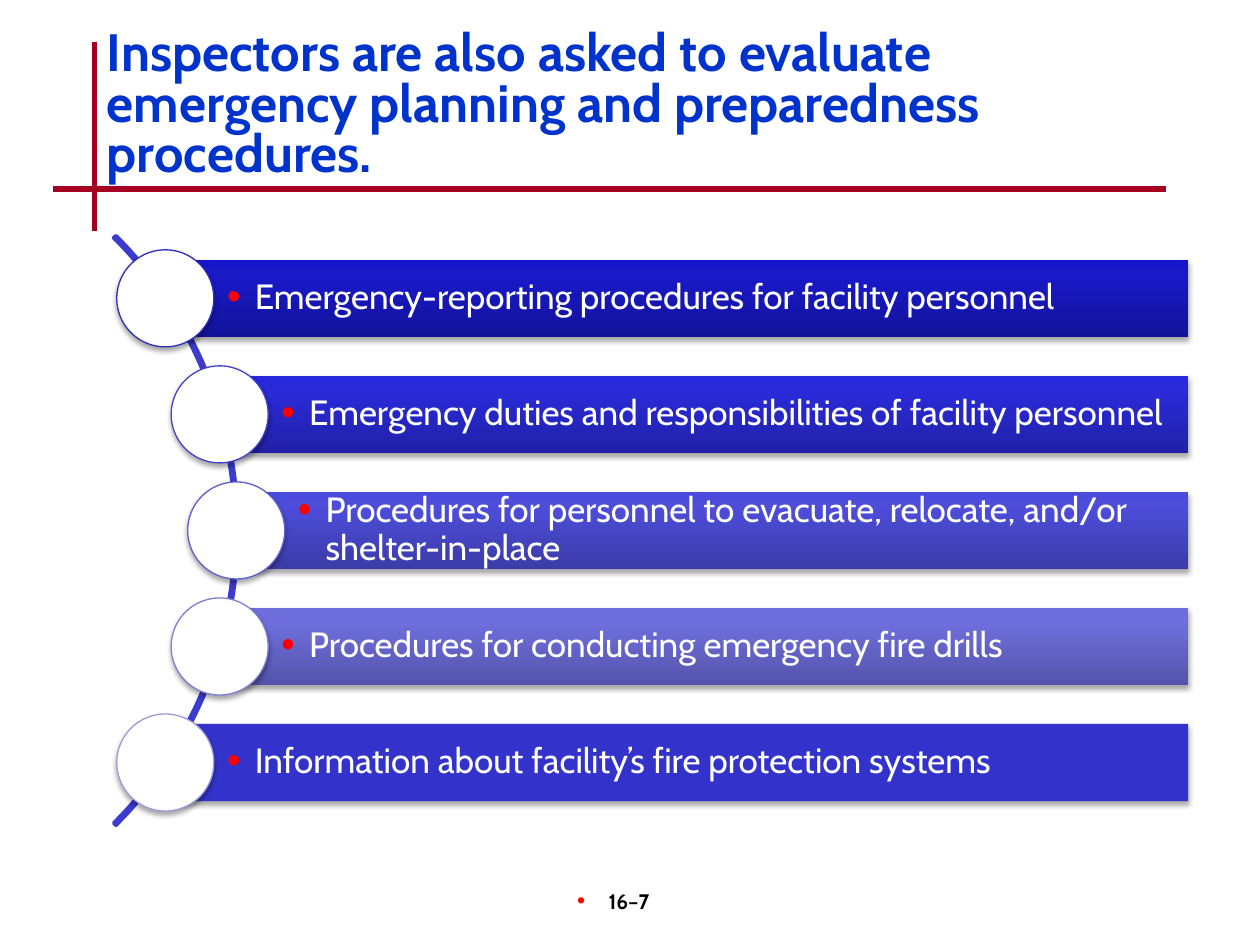
"""Builds the slide on emergency planning and preparedness procedures."""
from math import sqrt

from lxml.etree import SubElement
from pptx import Presentation
from pptx.dml.color import RGBColor
from pptx.enum.shapes import MSO_CONNECTOR, MSO_SHAPE
from pptx.enum.text import MSO_ANCHOR, PP_ALIGN
from pptx.oxml.ns import qn
from pptx.util import Inches, Pt

COLORS = {
    "title": "0033CC", "rule": "A50021", "arc": "3B3BCD", "bullet": "FF0000",
    "white": "FFFFFF", "black": "000000", "flat": "3333CC",
}
COLUMNS, ROWS = 100, 75
ARC_X, ARC_Y, ARC_RADIUS, CENTRE_RADIUS = -14.2, 42.1, 33.1, 32.95
STEP, BAR_HEIGHT, BAR_RIGHT, CIRCLE = 9.21, 6.15, 94.3, 7.7
PROCEDURES = [
    ("Emergency-reporting procedures for facility personnel",
     ("13139A", "1919C8", "1515CC"), "2E2EB9"),
    ("Emergency duties and responsibilities of facility personnel",
     ("2121A7", "2A2AD9", "2727DD"), "4141CB"),
    ("Procedures for personnel to evacuate, relocate, and/or shelter-in-place",
     ("3B3BA8", "4D4DDA", "4A4ADE"), "6060D0"),
    ("Procedures for conducting emergency fire drills",
     ("5454AA", "6E6EDC", "6C6CDF"), "7E7ED6"),
    ("Information about facility’s fire protection systems",
     (COLORS["flat"],), "9C9CDD"),
]


def write(frame, text, size, color, bold=False, align=PP_ALIGN.LEFT, spacing=1.0,
          anchor=MSO_ANCHOR.TOP, insets=(0.1, 0.05, 0.1, 0.05), bullet=None):
    frame.word_wrap = True
    frame.vertical_anchor = anchor
    (frame.margin_left, frame.margin_top,
     frame.margin_right, frame.margin_bottom) = map(Inches, insets)
    paragraph = frame.paragraphs[0]
    paragraph.alignment = align
    paragraph.line_spacing = spacing
    if bullet:
        margin, hanging = bullet
        properties = paragraph._p.get_or_add_pPr()
        properties.set("marL", str(Inches(margin)))
        properties.set("indent", str(-Inches(hanging)))
        tint = SubElement(properties, qn("a:buClr"))
        SubElement(tint, qn("a:srgbClr"), val=COLORS["bullet"])
        SubElement(properties, qn("a:buSzPct"), val="110000")
        SubElement(properties, qn("a:buFont"), typeface="Arial")
        SubElement(properties, qn("a:buChar"), char="•")
    run = paragraph.add_run()
    run.text = text
    run.font.name = "Cabin"
    run.font.size = Pt(size)
    run.font.bold = bold
    run.font.color.rgb = RGBColor.from_string(color)


class SlideBuilder:
    def __init__(self, deck):
        self.slide = deck.slides.add_slide(deck.slide_layouts[6])
        self.column = deck.slide_width / COLUMNS
        self.row = deck.slide_height / ROWS

    def place(self, x, y, width, height):
        return (round(x * self.column), round(y * self.row),
                round(width * self.column), round(height * self.row))

    def rule(self, x1, y1, x2, y2):
        line = self.slide.shapes.add_connector(
            MSO_CONNECTOR.STRAIGHT, *self.place(x1, y1, x2, y2))
        line.line.color.rgb = RGBColor.from_string(COLORS["rule"])
        line.line.width = Pt(3)
        SubElement(line._element.spPr, qn("a:effectLst"))

    def label(self, text, x, y, width, height, **style):
        box = self.slide.shapes.add_textbox(*self.place(x, y, width, height))
        write(box.text_frame, text, **style)

    def shape(self, kind, x, y, width, height, fills=(), outline=None, weight=0.75,
              shadow=True):
        shape = self.slide.shapes.add_shape(kind, *self.place(x, y, width, height))
        if len(fills) > 1:
            self.shade(shape, fills)
        elif fills:
            shape.fill.solid()
            shape.fill.fore_color.rgb = RGBColor.from_string(fills[0])
        else:
            shape.fill.background()
        if outline:
            shape.line.color.rgb = RGBColor.from_string(outline)
            shape.line.width = Pt(weight)
        else:
            shape.line.fill.background()
        shape.shadow.inherit = False
        if shadow:
            effects = shape._element.spPr.find(qn("a:effectLst"))
            outer = SubElement(effects, qn("a:outerShdw"), blurRad=str(Pt(3.1)),
                               dist=str(Pt(1.8)), dir="5400000", rotWithShape="0")
            tint = SubElement(outer, qn("a:srgbClr"), val=COLORS["black"])
            SubElement(tint, qn("a:alpha"), val="35000")
        return shape

    def shade(self, shape, fills):
        shape.fill.gradient()
        shape.fill.gradient_angle = 90
        stops = shape._element.spPr.find(qn("a:gradFill")).find(qn("a:gsLst"))
        for stop in list(stops):
            stops.remove(stop)
        for position, color in zip((0, 80000, 100000), fills):
            stop = SubElement(stops, qn("a:gs"), pos=str(position))
            SubElement(stop, qn("a:srgbClr"), val=color)

    def arc(self):
        arc = self.shape(MSO_SHAPE.BLOCK_ARC, ARC_X - ARC_RADIUS, ARC_Y - ARC_RADIUS,
                         2 * ARC_RADIUS, 2 * ARC_RADIUS, outline=COLORS["arc"],
                         weight=2, shadow=False)
        for index, value in enumerate((189, 27, 0.004)):
            arc.adjustments[index] = value

    def procedure(self, offset, text, fills, outline):
        x, y = ARC_X + sqrt(CENTRE_RADIUS ** 2 - offset ** 2), ARC_Y + offset
        bar = self.shape(MSO_SHAPE.RECTANGLE, x, y - BAR_HEIGHT / 2,
                         BAR_RIGHT - x, BAR_HEIGHT, fills)
        write(bar.text_frame, text, size=20, color=COLORS["white"], spacing=0.9,
              anchor=MSO_ANCHOR.MIDDLE, insets=(0.49, 0.06, 0.06, 0.06),
              bullet=(0.22, 0.22))
        self.shape(MSO_SHAPE.OVAL, x - CIRCLE / 2, y - CIRCLE / 2, CIRCLE, CIRCLE,
                   (COLORS["white"],), outline)


def main():
    deck = Presentation()
    deck.slide_width, deck.slide_height = Inches(10), Inches(7.5)
    builder = SlideBuilder(deck)
    builder.rule(7.5, 3.3, 7.5, 18.3)
    builder.rule(4.2, 15, 92.5, 15)
    builder.label("16–7", 39.2, 70, 20.8, 5, size=12, color=COLORS["black"],
                  bold=True, align=PP_ALIGN.CENTER, bullet=(0.06, 0.25))
    builder.label("Inspectors are also asked to evaluate emergency planning and "
                  "preparedness procedures.", 7.5, 2, 85, 11.7, size=30,
                  color=COLORS["title"], bold=True, spacing=0.8)
    builder.arc()
    middle = len(PROCEDURES) // 2
    for index, (text, fills, outline) in enumerate(PROCEDURES):
        builder.procedure((index - middle) * STEP, text, fills, outline)
    deck.save("out.pptx")


if __name__ == "__main__":
    main()
